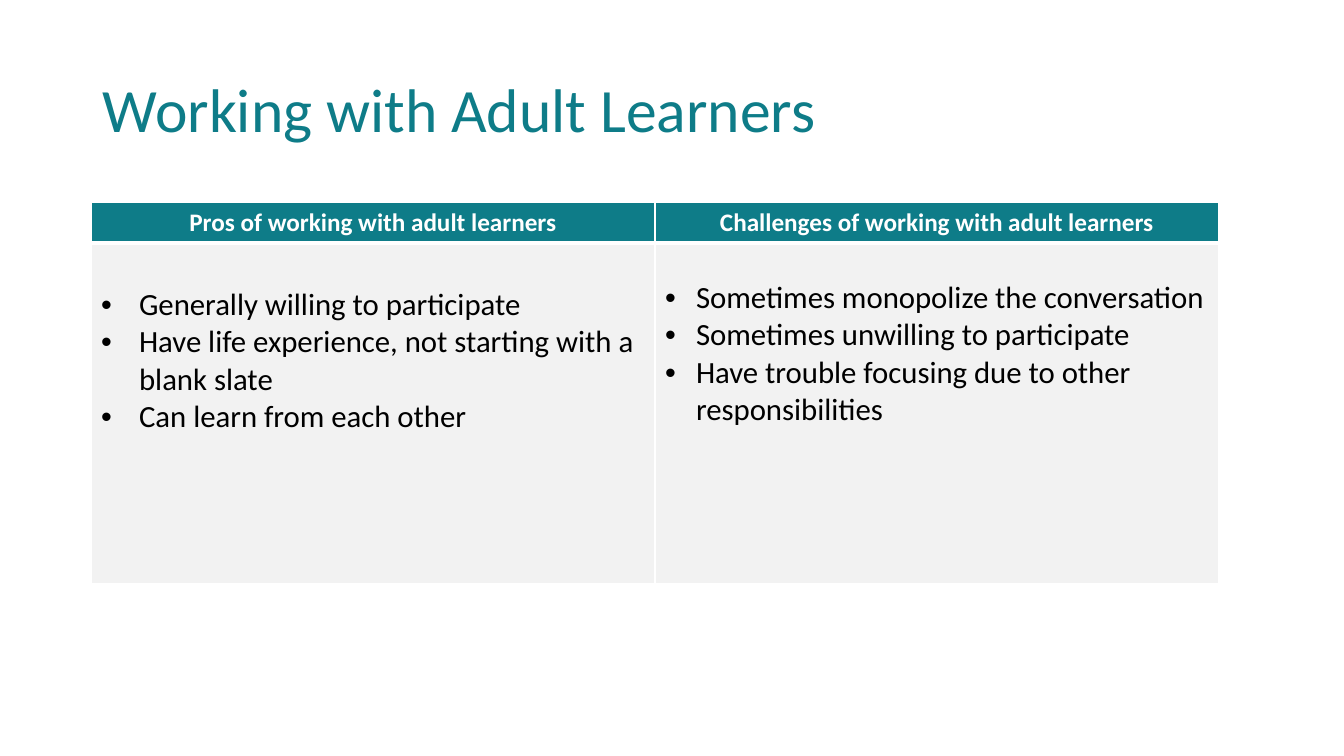
from lxml.etree import SubElement
from pptx import Presentation
from pptx.dml.color import RGBColor
from pptx.enum.text import MSO_ANCHOR as Anchor, PP_ALIGN as Align
from pptx.oxml.ns import qn
from pptx.util import Emu, Pt

TITLE = "Working with Adult Learners"
# heading, points, top margin of the points, hanging indent
COLUMNS = [
    ("Pros of working with adult learners",
     ["Generally willing to participate",
      "Have life experience, not starting with a blank slate",
      "Can learn from each other"], 43, 38),
    ("Challenges of working with adult learners",
     ["Sometimes monopolize the conversation",
      "Sometimes unwilling to participate",
      "Have trouble focusing due to other responsibilities"], 36, 31),
]

TEAL = RGBColor(0x0E, 0x7C, 0x88)
PALE_GREY = RGBColor(0xF2, 0xF2, 0xF2)
WHITE = RGBColor(0xFF, 0xFF, 0xFF)
BLACK = RGBColor(0x00, 0x00, 0x00)
FONT = "Calibri"

SLIDE_SIZE = (1344, 756)
TITLE_BOX = (93, 40, 1159, 146)
TABLE_LEFT, TABLE_TOP = 91, 202
COLUMN_WIDTH = 564
ROW_HEIGHTS = (41, 341)


def px(length):
    return Emu(round(length * 914400 / 100.8))


def write(frame, lines, size, color, bold=False, align=Align.LEFT, spacing=None, indent=0):
    """Fill a text frame, one paragraph a line; an indent adds hanging bullets."""
    frame.word_wrap = True
    for index, line in enumerate(lines):
        paragraph = frame.add_paragraph() if index else frame.paragraphs[0]
        paragraph.alignment = align
        if spacing:
            paragraph.line_spacing = spacing
        if indent:
            properties = paragraph._p.get_or_add_pPr()
            properties.set("marL", str(px(indent)))
            properties.set("indent", str(-px(indent)))
            SubElement(properties, qn("a:buFont"), typeface="Arial")
            SubElement(properties, qn("a:buChar"), char="•")
        run = paragraph.add_run()
        run.text = line
        run.font.name = FONT
        run.font.size = Pt(size)
        run.font.bold = bold
        run.font.color.rgb = color


def style_cell(cell, fill, top=1, bottom=1):
    """Give a cell its fill and white borders, with widths in points."""
    properties = cell._tc.get_or_add_tcPr()
    for side, width in (("L", 1), ("R", 1), ("T", top), ("B", bottom)):
        line = SubElement(properties, qn(f"a:ln{side}"), w=str(Pt(width)))
        line_fill = SubElement(line, qn("a:solidFill"))
        SubElement(line_fill, qn("a:srgbClr"), val=str(WHITE))
    cell.fill.solid()
    cell.fill.fore_color.rgb = fill


def main():
    presentation = Presentation()
    presentation.slide_width, presentation.slide_height = map(px, SLIDE_SIZE)
    slide = presentation.slides.add_slide(presentation.slide_layouts[6])

    title = slide.shapes.add_textbox(*map(px, TITLE_BOX)).text_frame
    title.vertical_anchor = Anchor.MIDDLE
    write(title, [TITLE], size=44, color=TEAL, spacing=0.9)

    table = slide.shapes.add_table(
        len(ROW_HEIGHTS), len(COLUMNS), px(TABLE_LEFT), px(TABLE_TOP),
        px(COLUMN_WIDTH * len(COLUMNS)), px(sum(ROW_HEIGHTS))).table
    for row, height in zip(table.rows, ROW_HEIGHTS):
        row.height = px(height)

    for index, (heading, points, top_margin, indent) in enumerate(COLUMNS):
        table.columns[index].width = px(COLUMN_WIDTH)
        header, body = table.cell(0, index), table.cell(1, index)
        style_cell(header, TEAL, bottom=3)
        write(header.text_frame, [heading], size=18, color=WHITE, bold=True, align=Align.CENTER)
        style_cell(body, PALE_GREY, top=3)
        body.margin_top = px(top_margin)
        write(body.text_frame, points, size=22, color=BLACK, indent=indent)

    presentation.save("out.pptx")


if __name__ == "__main__":
    main()
